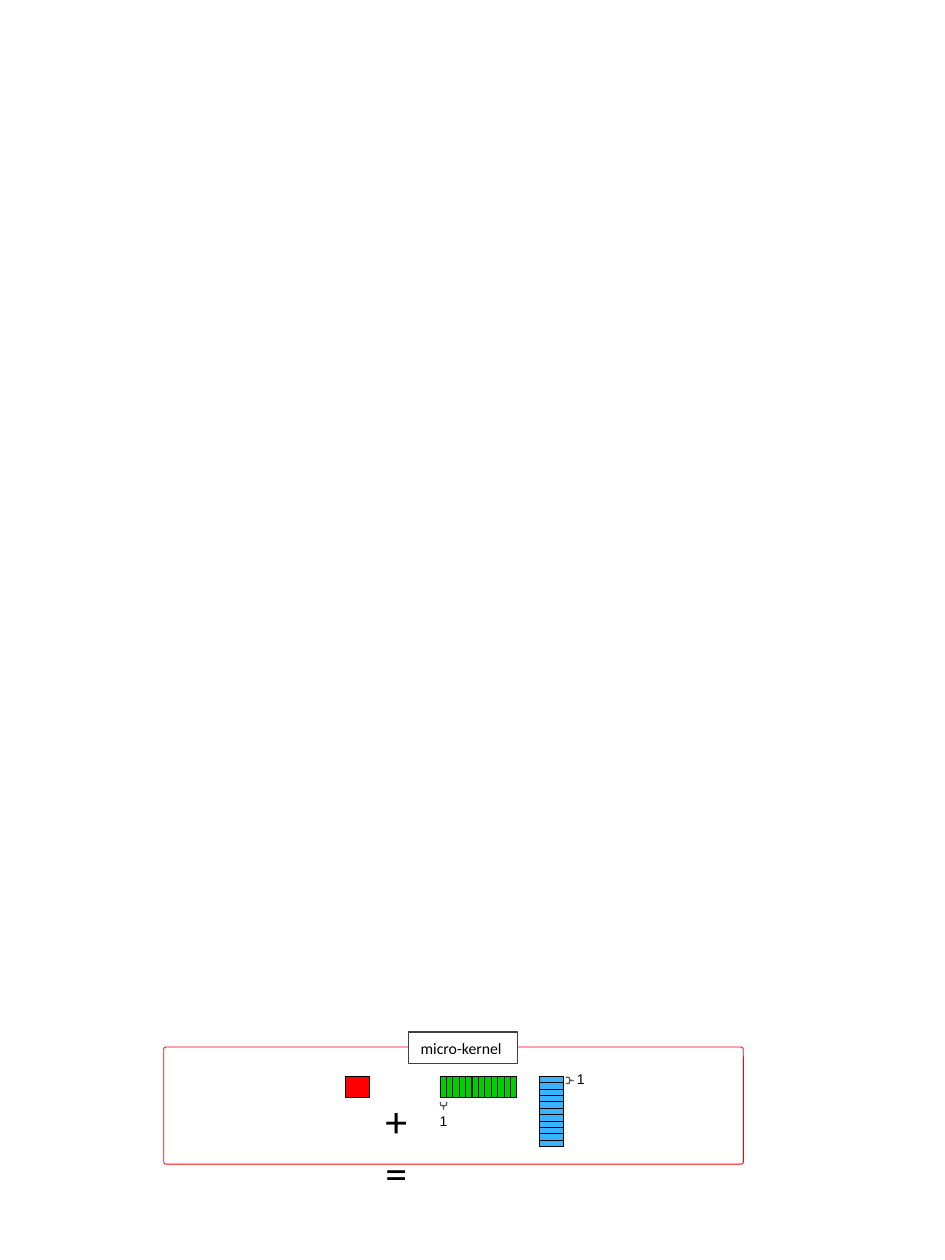
from pptx import Presentation
from pptx.dml.color import RGBColor
from pptx.enum import shapes
from pptx.util import Inches, Pt

BLACK = RGBColor(0x00, 0x00, 0x00)
WHITE = RGBColor(0xFF, 0xFF, 0xFF)
RED = RGBColor(0xFF, 0x00, 0x00)
GREEN = RGBColor(0x00, 0xCE, 0x00)
BLUE = RGBColor(0x38, 0xB4, 0xFF)
GREY = RGBColor(0x59, 0x59, 0x59)
DARK = RGBColor(0x40, 0x40, 0x40)
KIND = shapes.MSO_SHAPE

LABELS = [
    ("1", (4.48, 8.45, 0.27, 0.24), {"size": Pt(8), "name": "Arial"}),
    ("+=", (2.96, 8.63, 0.45, 0.4), {"size": Pt(25), "name": "Calibri"}),
    ("1", (3.39, 8.78, 0.27, 0.24), {"size": Pt(8), "name": "Arial"}),
]
FRAME = (1.3, 8.31, 4.6, 0.93)
TITLE = ("micro-kernel", (3.24, 8.19, 0.87, 0.25), {"size": Pt(9), "name": "Calibri"})
BRACES = [((3.49, 8.75, 0.06, 0.05), 90), ((4.49, 8.55, 0.06, 0.05), 0)]
TOP = 8.54
TILE_W, TILE_H = 0.19, 0.17
TILE_X, ROW_X, COLUMN_X = 2.74, 3.49, 4.28
ROW_W, ROW_CELLS, COLUMN_CELLS = 0.61, 12, 11
STEP = ROW_W / ROW_CELLS


def add_shape(s, kind, box, fill, line, width):
    sp = s.shapes.add_shape(kind, *map(Inches, box))
    sp.shadow.inherit = False
    if fill is None:
        sp.fill.background()
    else:
        sp.fill.solid()
        sp.fill.fore_color.rgb = fill
    sp.line.color.rgb = line
    sp.line.width = Pt(width)
    return sp


def write(sp, words, fmt):
    tf = sp.text_frame
    tf.word_wrap = True
    p = tf.paragraphs[0]
    p.alignment = 1
    r = p.add_run()
    r.text = words
    r.font.color.rgb = BLACK
    for key, value in fmt.items():
        setattr(r.font, key, value)


prs = Presentation()
prs.slide_width, prs.slide_height = Inches(7.5), Inches(10)
s = prs.slides.add_slide(prs.slide_layouts[6])

for words, box, fmt in LABELS:
    write(s.shapes.add_textbox(*map(Inches, box)), words, fmt)

cells = [((TILE_X, TOP, TILE_W, TILE_H), RED)]
cells += [((ROW_X + i * STEP, TOP, STEP, TILE_H), GREEN) for i in range(ROW_CELLS)]
cells += [((COLUMN_X, TOP + i * STEP, TILE_W, STEP), BLUE) for i in range(COLUMN_CELLS)]
for box, fill in cells:
    add_shape(s, KIND.RECTANGLE, box, fill, BLACK, 0.25)

for box, angle in BRACES:
    add_shape(s, KIND.RIGHT_BRACE, box, None, GREY, 0.75).rotation = angle

frame = add_shape(s, KIND.ROUNDED_RECTANGLE, FRAME, None, RED, 0.5)
frame.adjustments[0] = 0.02

words, box, fmt = TITLE
write(add_shape(s, KIND.RECTANGLE, box, WHITE, DARK, 0.75), words, fmt)

prs.save("out.pptx")
